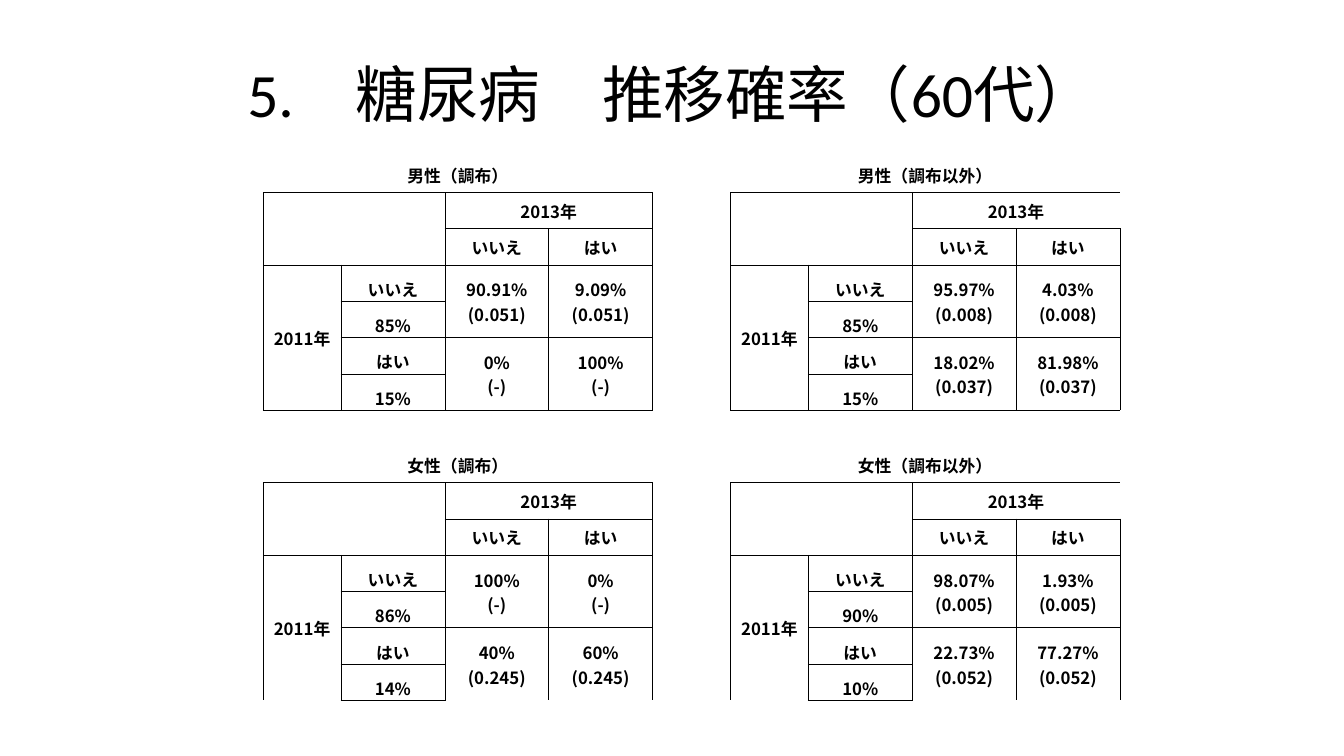
from dataclasses import dataclass

from lxml.etree import SubElement
from pptx import Presentation
from pptx.dml.color import RGBColor
from pptx.enum.text import MSO_ANCHOR as Anchor, PP_ALIGN as Align
from pptx.oxml.ns import qn
from pptx.util import Inches, Pt


@dataclass(frozen=True)
class Theme:
    ink: str = "000000"
    heading_font: str = "Calibri"
    heading_size: int = 44
    table_font: str = "Noto Sans CJK JP"
    table_size: int = 12
    rule_width: float = 0.5
    inset: float = 0.01


THEME = Theme()
SLIDE_W, SLIDE_H = 13.33, 7.5
BLOCK_UNITS = (3, 4, 4, 4)
COLUMN_UNITS = BLOCK_UNITS + (3,) + BLOCK_UNITS
BLOCK_ROWS, ROW_STEP, COLUMN_STEP = 7, 8, 5

GROUPS = [
    [("男性（調布）", ("85%", "15%"),
      (("90.91%\n(0.051)", "9.09%\n(0.051)"), ("0%\n(-)", "100%\n(-)"))),
     ("男性（調布以外）", ("85%", "15%"),
      (("95.97%\n(0.008)", "4.03%\n(0.008)"), ("18.02%\n(0.037)", "81.98%\n(0.037)")))],
    [("女性（調布）", ("86%", "14%"),
      (("100%\n(-)", "0%\n(-)"), ("40%\n(0.245)", "60%\n(0.245)"))),
     ("女性（調布以外）", ("90%", "10%"),
      (("98.07%\n(0.005)", "1.93%\n(0.005)"), ("22.73%\n(0.052)", "77.27%\n(0.052)")))],
]


def write(frame, text, font, size, bold=False):
    paragraph = frame.paragraphs[0]
    paragraph.alignment = Align.CENTER
    for index, line in enumerate(text.split("\n")):
        if index:
            paragraph.add_line_break()
        run = paragraph.add_run()
        run.text = line
        run.font.name = font
        run.font.size = Pt(size)
        run.font.bold = bold
        run.font.color.rgb = RGBColor.from_string(THEME.ink)
        if font == THEME.table_font:
            SubElement(run.font._element, qn("a:ea"), typeface=font)


def add_heading(slide, left, top, width, height):
    heading = slide.shapes.add_textbox(*map(Inches, (left, top, width, height)))
    frame = heading.text_frame
    frame.word_wrap = True
    frame.vertical_anchor = Anchor.MIDDLE
    write(frame, "5.　糖尿病　推移確率（60代）", THEME.heading_font, THEME.heading_size)


def fill_cell(table, row, column, text, rows=1, columns=1, anchor=Anchor.MIDDLE):
    cell = table.cell(row, column)
    if rows * columns > 1:
        cell.merge(table.cell(row + rows - 1, column + columns - 1))
    cell.vertical_anchor = anchor
    write(cell.text_frame, text, THEME.table_font, THEME.table_size, bold=True)


def outline(edges, row, column, rows=1, columns=1):
    for r in range(row, row + rows):
        edges |= {("v", r, column), ("v", r, column + columns)}
    for c in range(column, column + columns):
        edges |= {("h", row, c), ("h", row + rows, c)}


def add_transition_block(table, edges, top, left, group):
    caption, shares, probabilities = group
    answers = ("いいえ", "はい")

    def place(row, column, text, rows=1, columns=1, anchor=Anchor.MIDDLE):
        fill_cell(table, top + row, left + column, text, rows, columns, anchor)
        outline(edges, top + row, left + column, rows, columns)

    fill_cell(table, top, left, caption, columns=len(BLOCK_UNITS))
    outline(edges, top + 1, left, 2, 2)
    place(1, 2, "2013年", columns=2)
    place(3, 0, "2011年", rows=4)
    for index, answer in enumerate(answers):
        row = 3 + 2 * index
        place(2, 2 + index, answer)
        place(row, 1, answer, anchor=Anchor.BOTTOM)
        place(row + 1, 1, shares[index], anchor=Anchor.BOTTOM)
        for column, probability in enumerate(probabilities[index], 2):
            place(row, column, probability, rows=2)


def draw_rule(properties, side, visible):
    rule = SubElement(properties, qn(f"a:ln{side}"), w=str(Pt(THEME.rule_width)))
    if visible:
        solid = SubElement(rule, qn("a:solidFill"))
        SubElement(solid, qn("a:srgbClr"), val=THEME.ink)
    else:
        SubElement(rule, qn("a:noFill"))


def finish_cell(cell, edges, row, column):
    cell.margin_left = cell.margin_top = cell.margin_right = Inches(THEME.inset)
    cell.margin_bottom = 0
    properties = cell._tc.get_or_add_tcPr()
    for side, edge in (("L", ("v", row, column)), ("R", ("v", row, column + 1)),
                       ("T", ("h", row, column)), ("B", ("h", row + 1, column))):
        draw_rule(properties, side, edge in edges)
    cell.fill.background()


def add_probability_table(slide, left, top, width, height):
    row_count = ROW_STEP * (len(GROUPS) - 1) + BLOCK_ROWS
    table = slide.shapes.add_table(
        row_count, len(COLUMN_UNITS), *map(Inches, (left, top, width, height))).table
    table.first_row = table.horz_banding = False
    for column, units in zip(table.columns, COLUMN_UNITS):
        column.width = Inches(width * units / sum(COLUMN_UNITS))
    for row in table.rows:
        row.height = Inches(height / row_count)

    edges = set()
    for i, sex in enumerate(GROUPS):
        for j, group in enumerate(sex):
            add_transition_block(table, edges, i * ROW_STEP, j * COLUMN_STEP, group)
    for r in range(row_count):
        for c in range(len(COLUMN_UNITS)):
            finish_cell(table.cell(r, c), edges, r, c)


def main():
    deck = Presentation()
    deck.slide_width, deck.slide_height = Inches(SLIDE_W), Inches(SLIDE_H)
    slide = deck.slides.add_slide(deck.slide_layouts[6])
    add_heading(slide, SLIDE_W * 0.05, SLIDE_H * 0.04, SLIDE_W * 0.9, SLIDE_H / 6)
    add_probability_table(slide, 2.61, 1.55, 8.5, SLIDE_H * 0.72)
    deck.save("out.pptx")


if __name__ == "__main__":
    main()
